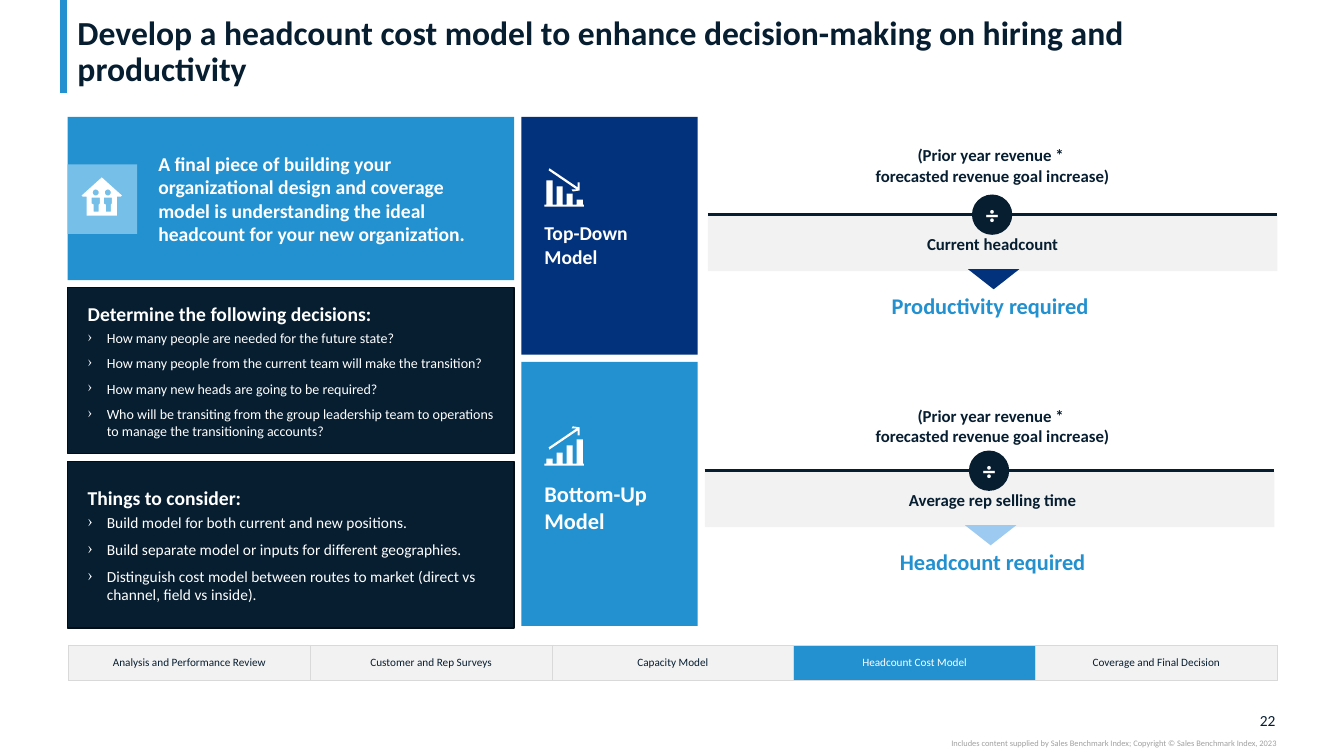
import copy
import dataclasses
import math
import typing

import lxml.etree
import pptx
import pptx.dml.color
import pptx.enum.shapes
import pptx.enum.text
import pptx.oxml.ns
import pptx.util

Inches = pptx.util.Inches
Pt = pptx.util.Pt
qn = pptx.oxml.ns.qn
KIND = pptx.enum.shapes.MSO_SHAPE
SIDE = pptx.enum.text.PP_ALIGN
HOLD = pptx.enum.text.MSO_ANCHOR

NAVY, BLUE, DEEP, GRAY, WHITE = "071E31", "2391CF", "03327C", "F2F2F2", "FFFFFF"
Point = tuple[float, float]
Box = tuple[float, float, float, float]


@dataclasses.dataclass
class Line:
    text: str
    size: float
    color: str = WHITE
    bold: bool = True
    align: typing.Any = SIDE.LEFT
    after: float = 0
    bullet: bool = False
    pitch: float = 1.0


@dataclasses.dataclass
class Card:
    top: float
    head: str
    items: list[str]
    size: float


@dataclasses.dataclass
class Model:
    name: str
    size: float
    box: Box
    label: Box
    fill: str
    base: float
    rise: bool
    left: float
    rule: float
    lift: float
    under: str
    goal: str
    tip: str


def tint(code: str) -> pptx.dml.color.RGBColor:
    return pptx.dml.color.RGBColor.from_string(code)


def apply(item: typing.Any, form: dict[str, typing.Any]) -> None:
    for key, value in form.items():
        setattr(item, key, value)


def write(frame: typing.Any, lines: list[Line], anchor: typing.Any = HOLD.TOP,
          pads: Box = (0, 0, 0, 0)) -> None:
    names = ("margin_left", "margin_top", "margin_right", "margin_bottom")
    apply(frame, {"word_wrap": True, "vertical_anchor": anchor,
                  **{name: Inches(pad) for name, pad in zip(names, pads)}})
    for spot, line in enumerate(lines):
        para = frame.add_paragraph() if spot else frame.paragraphs[0]
        para.text = line.text
        if line.bullet:
            props = para._p.get_or_add_pPr()
            props.set("marL", str(Inches(0.19)))
            props.set("indent", str(-Inches(0.19)))
            shade = lxml.etree.SubElement(props, qn("a:buClr"))
            lxml.etree.SubElement(shade, qn("a:srgbClr"), val=line.color)
            lxml.etree.SubElement(props, qn("a:buChar"), char="›")
        apply(para, {"alignment": line.align, "space_after": Pt(line.after),
                     "space_before": Pt(0), "line_spacing": line.pitch})
        for run in para.runs:
            apply(run.font, {"name": "Calibri", "size": Pt(line.size), "bold": line.bold})
            run.font.color.rgb = tint(line.color)
        for gap in para._p.findall(qn("a:br")):
            gap.append(copy.deepcopy(para.runs[0]._r.rPr))


def paint(shape: typing.Any, fill: str, edge: str = "") -> None:
    shape.shadow.inherit = False
    shape.fill.solid()
    shape.fill.fore_color.rgb = tint(fill)
    if edge:
        shape.line.color.rgb = tint(edge)
        shape.line.width = Pt(1)
    else:
        shape.line.fill.background()


def block(slide: typing.Any, box: Box, fill: str, kind: typing.Any = KIND.RECTANGLE,
          edge: str = "") -> typing.Any:
    shape = slide.shapes.add_shape(kind, *map(Inches, box))
    paint(shape, fill, edge)
    return shape


def label(slide: typing.Any, box: Box, line: Line, anchor: typing.Any = HOLD.TOP,
          pads: Box = (0, 0, 0, 0)) -> None:
    write(slide.shapes.add_textbox(*map(Inches, box)).text_frame, [line], anchor, pads)


def stroke(slide: typing.Any, start: Point, end: Point, color: str, width: float) -> None:
    line = slide.shapes.add_connector(pptx.enum.shapes.MSO_CONNECTOR.STRAIGHT,
                                      *map(Inches, start + end))
    line.line.color.rgb = tint(color)
    line.line.width = Pt(width)
    lxml.etree.SubElement(line._element.spPr, qn("a:effectLst"))


def trace(slide: typing.Any, loops: list[list[Point]]) -> None:
    loops = [[(Inches(x), Inches(y)) for x, y in loop] for loop in loops]
    pen = slide.shapes.build_freeform(*loops[0][0])
    pen.add_line_segments(loops[0][1:])
    for loop in loops[1:]:
        pen.move_to(*loop[0])
        pen.add_line_segments(loop[1:])
    paint(pen.convert_to_shape(), WHITE)


def house(slide: typing.Any) -> None:
    loops = [[(1.01, 1.76), (1.21, 1.94), (1.2, 1.95), (1.16, 1.95), (1.16, 2.14),
              (0.86, 2.14), (0.86, 1.95), (0.82, 1.95), (0.81, 1.94)]]
    body = [(0, 1.96), (0.08, 1.96), (0.08, 2.02), (0.07, 2.03), (0.07, 2.1),
            (0.02, 2.1), (0.02, 2.03), (0, 2.02)]
    turns = [math.tau * step / 16 for step in range(16)]
    for left in (0.91, 1.03):
        loops.append([(left + 0.04 + 0.03 * math.cos(turn), 1.91 + 0.03 * math.sin(turn))
                      for turn in turns])
        loops.append([(left + x, y) for x, y in body])
    trace(slide, loops)


def graph(slide: typing.Any, base: float, rise: bool) -> None:
    left, sill = 5.4, base - 0.02
    tall = [0.05, 0.11, 0.18, 0.24]
    shape = [(left, base), (left, sill)]
    for spot, height in enumerate(tall if rise else tall[::-1]):
        x = left + 0.02 + 0.1 * spot
        shape += [(x, sill), (x, sill - height), (x + 0.06, sill - height), (x + 0.06, sill)]
    trace(slide, [shape + [(left + 0.39, sill), (left + 0.39, base)]])
    arrow = [(0.05, 0.16), (0.33, 0.35), (0.33, 0.3), (0.35, 0.3), (0.35, 0.38),
             (0.28, 0.39), (0.27, 0.37), (0.32, 0.37), (0.04, 0.18)]
    trace(slide, [[(left + x, base - (y if rise else 0.54 - y)) for x, y in arrow]])


def draw(slide: typing.Any, model: Model) -> None:
    left, rule, wide, mid = model.left, model.rule, 5.65, SIDE.CENTER
    block(slide, model.box, model.fill)
    label(slide, model.label, Line(model.name, model.size), HOLD.MIDDLE)
    graph(slide, model.base, model.rise)
    block(slide, (left, rule + 0.01, wide, 0.55), GRAY)
    stroke(slide, (left, rule), (left + wide, rule), NAVY, 2)
    tip = block(slide, (left + 2.58, rule + 0.54, 0.51, 0.2), model.tip, KIND.ISOSCELES_TRIANGLE)
    tip.rotation = 180
    label(slide, (7.02, rule - model.lift, wide, 0.42),
          Line("(Prior year revenue * \vforecasted revenue goal increase)", 12, NAVY, align=mid),
          HOLD.BOTTOM)
    label(slide, (7.02, rule + 0.19, wide, 0.21), Line(model.under, 12, NAVY, align=mid))
    label(slide, (7.02, rule + 0.75, wide, 0.28), Line(model.goal, 16, BLUE, align=mid), HOLD.BOTTOM)
    disc = block(slide, (left + 2.62, rule - 0.2, 0.4, 0.4), NAVY, KIND.OVAL)
    write(disc.text_frame, [Line("÷", 18, align=mid)], HOLD.MIDDLE)


def steps(slide: typing.Any, names: list[str], live: str) -> None:
    grid = slide.shapes.add_table(1, len(names), *map(Inches, (0.68, 6.4, 11.99, 0.35))).table
    apply(grid, {"first_row": False, "horz_banding": False})
    for spot, name in enumerate(names):
        grid.columns[spot].width = Inches(11.99 / len(names))
        cell = grid.cell(0, spot)
        props = cell._tc.get_or_add_tcPr()
        for side in "LRTB":
            edge = lxml.etree.SubElement(props, qn("a:ln" + side), w=str(Pt(0.5)))
            fill = lxml.etree.SubElement(edge, qn("a:solidFill"))
            lxml.etree.SubElement(fill, qn("a:srgbClr"), val="D9D9D9")
        cell.fill.solid()
        cell.fill.fore_color.rgb = tint(BLUE if name == live else GRAY)
        color = WHITE if name == live else NAVY
        write(cell.text_frame, [Line(name, 8, color, False, SIDE.CENTER)])
        apply(cell, {"vertical_anchor": HOLD.MIDDLE, "margin_left": 0, "margin_right": 0,
                     "margin_top": Inches(0.05), "margin_bottom": Inches(0.05)})


CARDS = [
    Card(2.85, "Determine the following decisions:", [
        "How many people are needed for the future state?",
        "How many people from the current team will make the transition?",
        "How many new heads are going to be required?",
        "Who will be transiting from the group leadership team to operations "
        "to manage the transitioning accounts?"], 10),
    Card(4.58, "Things to consider:", [
        "Build model for both current and new positions.",
        "Build separate model or inputs for different geographies.",
        "Distinguish cost model between routes to market (direct vs channel, "
        "field vs inside)."], 11),
]
MODELS = [
    Model("Top-Down Model", 14, (5.17, 1.16, 1.75, 2.36), (5.4, 2.19, 1.32, 0.47), DEEP, 2.05,
          False, 7.02, 2.13, 0.71, "Current headcount", "Productivity required ", DEEP),
    Model("Bottom-Up Model", 16, (5.17, 3.59, 1.75, 2.62), (5.4, 4.76, 1.32, 0.54), BLUE, 4.62,
          True, 6.99, 4.67, 0.67, "Average rep selling time", "Headcount required", "9CCAF1"),
]
STEPS = ["Analysis and Performance Review", "Customer and Rep Surveys", "Capacity Model",
         "Headcount Cost Model", "Coverage and Final Decision"]


def main() -> None:
    deck = pptx.Presentation()
    apply(deck, {"slide_width": Inches(13.33), "slide_height": Inches(7.5)})
    slide = deck.slides.add_slide(deck.slide_layouts[6])
    stroke(slide, (0.63, 0), (0.63, 0.92), BLUE, 5)
    label(slide, (0.67, 0.04, 11.99, 0.84),
          Line("Develop a headcount cost model to enhance decision-making on hiring and "
               "productivity", 24, NAVY, pitch=0.9), HOLD.BOTTOM, (0.1, 0, 0.1, 0))
    for model in MODELS:
        draw(slide, model)
    steps(slide, STEPS, "Headcount Cost Model")
    intro = block(slide, (0.67, 1.16, 4.43, 1.62), BLUE)
    write(intro.text_frame,
          [Line("A final piece of building your organizational design and coverage model is "
                "understanding the ideal headcount for your new organization.", 14, after=3)],
          HOLD.MIDDLE, (0.9, 0.2, 0.2, 0.2))
    for card in CARDS:
        shape = block(slide, (0.67, card.top, 4.43, 1.65), NAVY, edge="030D15")
        rows = [Line(item, card.size, bold=False, after=6, bullet=True) for item in card.items]
        write(shape.text_frame, [Line(card.head, 14, after=3)] + rows,
              HOLD.MIDDLE, (0.2, 0.2, 0.2, 0.2))
    block(slide, (0.67, 1.63, 0.69, 0.69), "75BFE8")
    house(slide)
    label(slide, (12.32, 7.05, 0.33, 0.19), Line("22", 11, NAVY, False, SIDE.RIGHT), HOLD.MIDDLE)
    label(slide, (7.5, 7.32, 5.16, 0.1),
          Line("Includes content supplied by Sales Benchmark Index; Copyright © Sales Benchmark "
               "Index, 2023", 6, "A0A0A0", False, SIDE.RIGHT))
    deck.save("out.pptx")


if __name__ == "__main__":
    main()
